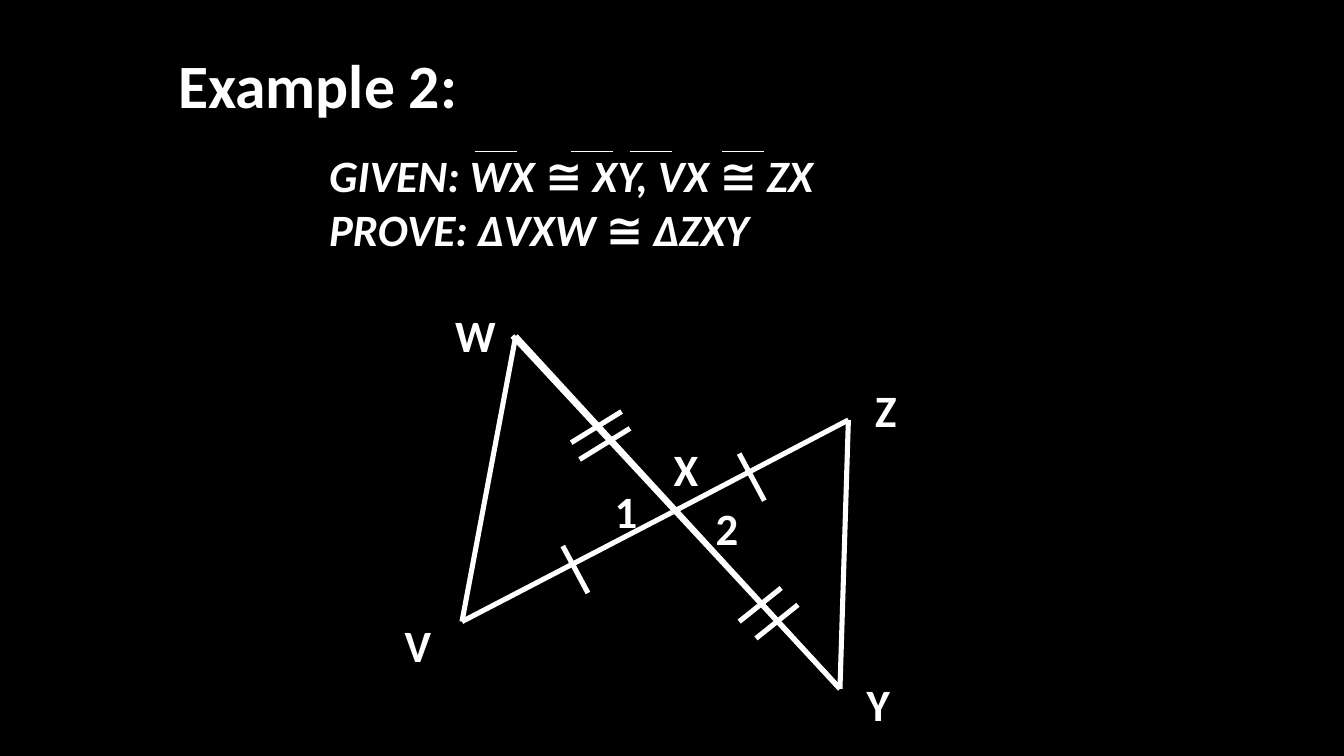
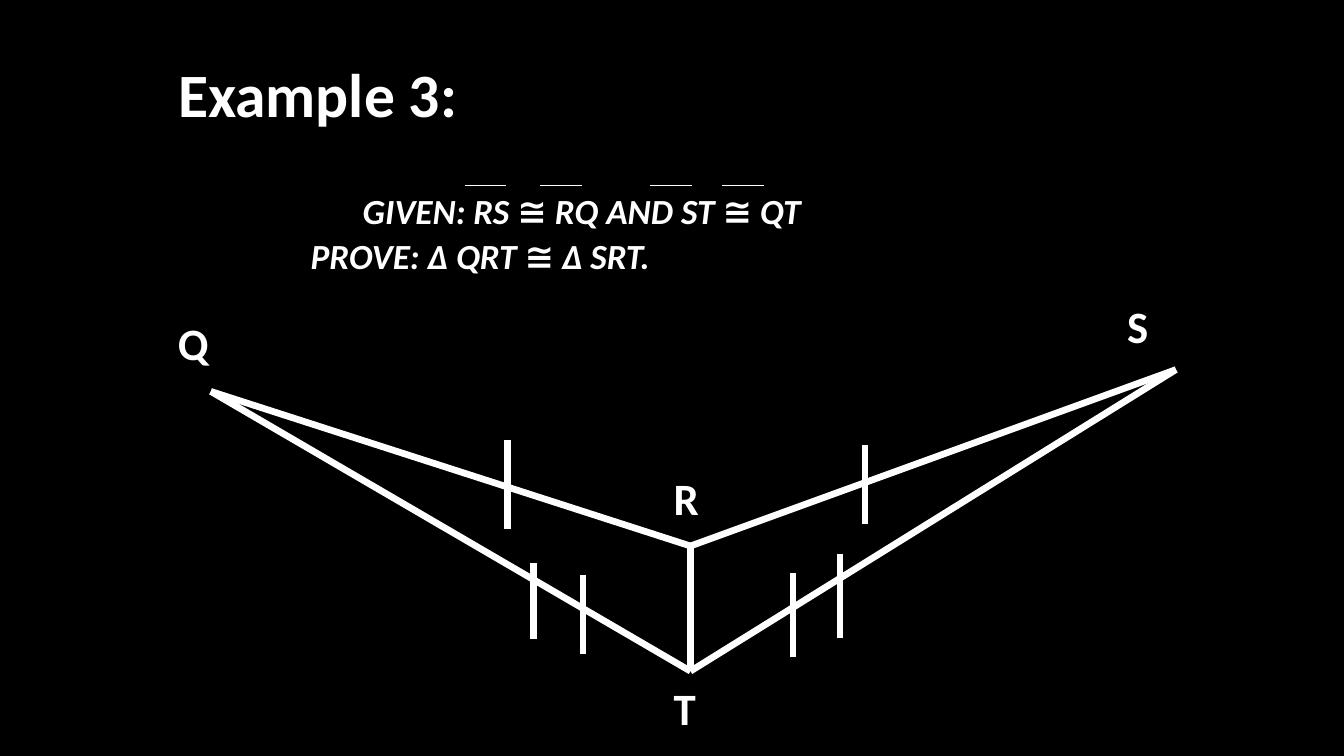
from dataclasses import dataclass

from lxml.etree import SubElement
from pptx import Presentation
from pptx.dml.color import RGBColor
from pptx.enum.shapes import MSO_CONNECTOR
from pptx.enum.text import MSO_ANCHOR, MSO_AUTO_SIZE, PP_ALIGN
from pptx.oxml.ns import qn
from pptx.util import Inches, Pt

COLS, ROWS = 160, 90  # grid of twelve cells to the inch


@dataclass(frozen=True)
class Theme:
    font: str = "Calibri"
    paper: RGBColor = RGBColor(0x00, 0x00, 0x00)
    ink: RGBColor = RGBColor(0xFF, 0xFF, 0xFF)
    title: float = 44
    label: float = 32
    overbar: float = 1


THEME = Theme()

# Points are grid cells from the top left corner of the figure's box.
# Marks are (direction, starting points).
CROSSED_TRIANGLES = dict(
    points={"W": (14.4, 4), "W′": (14, 4), "X": (33, 25), "V": (8, 38),
            "Z": (54, 14), "Y": (53, 46)},
    sides=[("Z", "Y"), ("X", "V"), ("W", "V"), ("W", "Y"), ("W′", "Y"), ("Z", "X")],
    marks=[((3, 5.6), [(41, 18), (20, 29)]),
           ((6, -3.7), [(21, 16.7), (22, 18.7)]),
           ((5, -4), [(43, 40), (41, 38)])],
    labels={"1": (25, 21), "2": (37, 23), "W": (6, 0), "V": (0, 37),
            "X": (32, 16), "Z": (56, 9), "Y": (55, 44)},
    weight=3.63,
)
KITE = dict(
    points={"Q": (5.1, 11.6), "R": (62.2, 30), "S": (120, 9), "T": (62.2, 44.9)},
    sides=[("R", "T"), ("S", "R"), ("S", "T"), ("Q", "R"), ("Q", "T")],
    marks=[((0, 9.4), [(83, 18), (49.4, 33.5)]),
           ((0, 10.6), [(40.4, 17.4)]),
           ((0, 10), [(80, 31), (74.4, 33.2)]),
           ((0, 9.1), [(43.5, 32)])],
    labels={"Q": (0, 2), "R": (59, 20.5), "S": (113, 0), "T": (59, 45.4)},
    weight=4.75,
)


def cells(n):
    return Inches(n / 12)


def write(sp, lines, size, italic=False, anchor=MSO_ANCHOR.TOP, first_indent=0, gap=0):
    tf = sp.text_frame
    tf.word_wrap = True
    tf.auto_size = MSO_AUTO_SIZE.NONE
    tf.vertical_anchor = anchor
    for i, line in enumerate(lines):
        p = tf.paragraphs[0] if i == 0 else tf.add_paragraph()
        p.alignment = PP_ALIGN.LEFT
        if i == 0 and first_indent:
            p._p.get_or_add_pPr().set("indent", str(cells(first_indent)))
        if i and gap:
            p.space_before = Pt(gap)
        r = p.add_run()
        r.text = line
        r.font.name, r.font.size = THEME.font, Pt(size)
        r.font.bold, r.font.italic = True, italic
        r.font.color.rgb = THEME.ink


def add_text(s, box, lines, size, **fmt):
    sp = s.shapes.add_textbox(*map(cells, box))
    write(sp, lines, size, **fmt)


def add_line(s, start, end, weight):
    line = s.shapes.add_connector(MSO_CONNECTOR.STRAIGHT, *map(cells, (*start, *end)))
    line.line.color.rgb = THEME.ink
    line.line.width = Pt(weight)
    SubElement(line._element.spPr, qn("a:effectLst"))


def shift(point, offset):
    return point[0] + offset[0], point[1] + offset[1]


def add_title(s, text, top):
    title = s.shapes.title
    title.left, title.top, title.width, title.height = map(cells, (20, top, 49, 10))
    write(title, [text], THEME.title)


def add_statement(s, box, lines, size, bars, bar_top, **fmt):
    """Given and prove lines, with a bar above each named segment."""
    add_text(s, box, lines, size, italic=True, anchor=MSO_ANCHOR.MIDDLE, **fmt)
    for left in bars:
        start = shift(box, (left, bar_top))
        add_line(s, start, shift(start, (5, 0)), THEME.overbar)


def add_figure(s, origin, points, sides, marks, labels, weight):
    for a, b in sides:
        add_line(s, shift(origin, points[a]), shift(origin, points[b]), weight)
    for direction, starts in marks:
        for start in starts:
            at = shift(origin, start)
            add_line(s, at, shift(at, direction), weight)
    for name, at in labels.items():
        add_text(s, (*shift(origin, at), 9, 7.5), [name], THEME.label)


def add_example(prs, title, title_top, statement, origin, figure):
    s = prs.slides.add_slide(prs.slide_layouts.get_by_name("Title Only"))
    add_title(s, title, title_top)
    add_statement(s, **statement)
    add_figure(s, origin, **figure)


def main():
    prs = Presentation()
    prs.slide_width, prs.slide_height = cells(COLS), cells(ROWS)
    fill = prs.slide_master.background.fill
    fill.solid()
    fill.fore_color.rgb = THEME.paper

    add_example(
        prs, "Example 2:", 5,
        dict(box=(38, 12, 96, 24), size=32,
             lines=["GIVEN: WX ≅ XY, VX ≅ ZX", "PROVE: ΔVXW ≅ ΔZXY"],
             bars=(18.5, 30, 37, 48), bar_top=6),
        (47, 36), CROSSED_TRIANGLES)
    add_example(
        prs, "Example 3:", 6,
        dict(box=(35.8, 21.6, 104, 12.2), size=25.2,
             lines=["GIVEN: RS ≅ RQ AND ST ≅ QT", "PROVE: Δ QRT ≅ Δ SRT."],
             bars=(19.5, 28.5, 41.6, 50.2), bar_top=0.5, first_indent=6.2, gap=2),
        (20, 35), KITE)
    prs.save("out.pptx")


if __name__ == "__main__":
    main()
